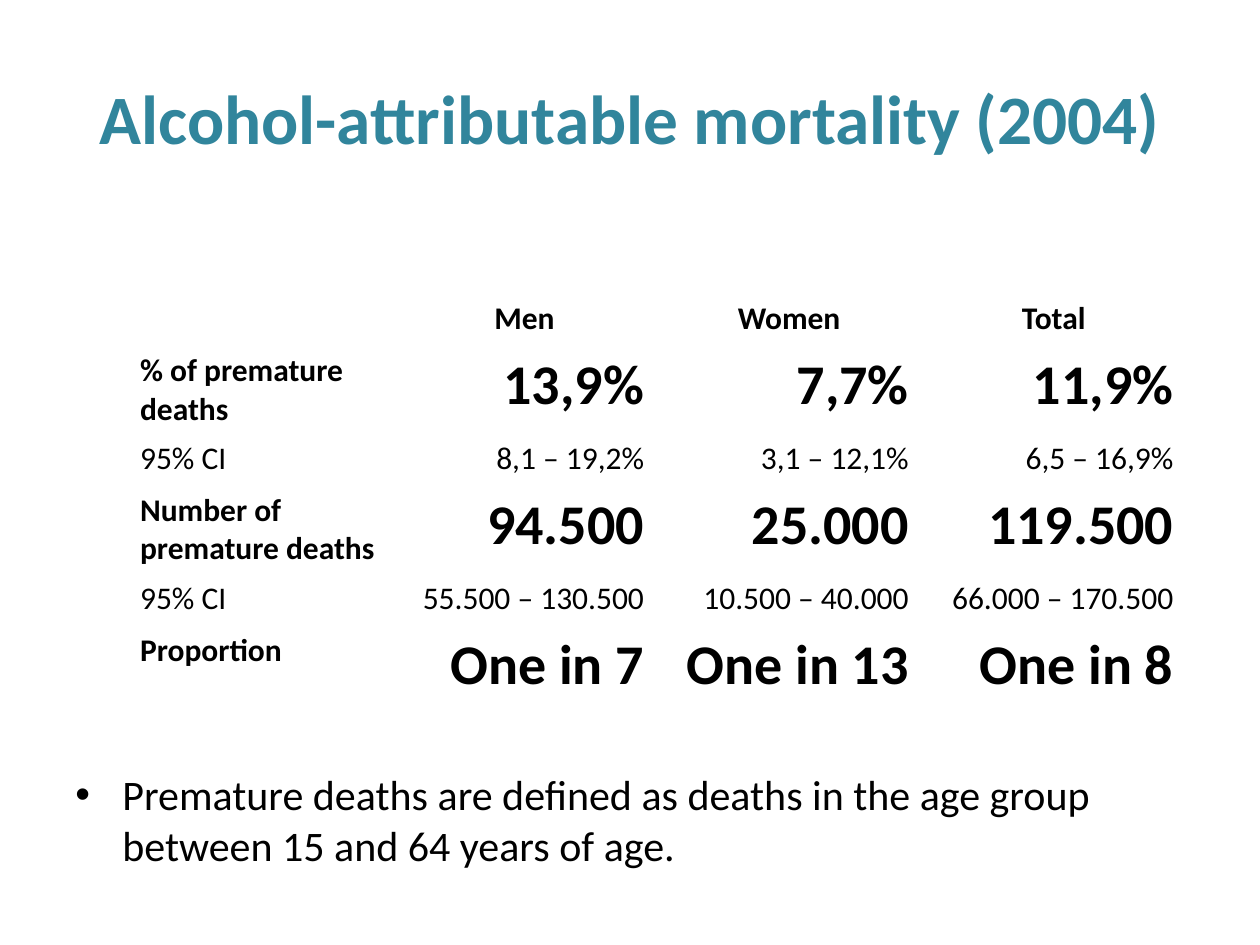
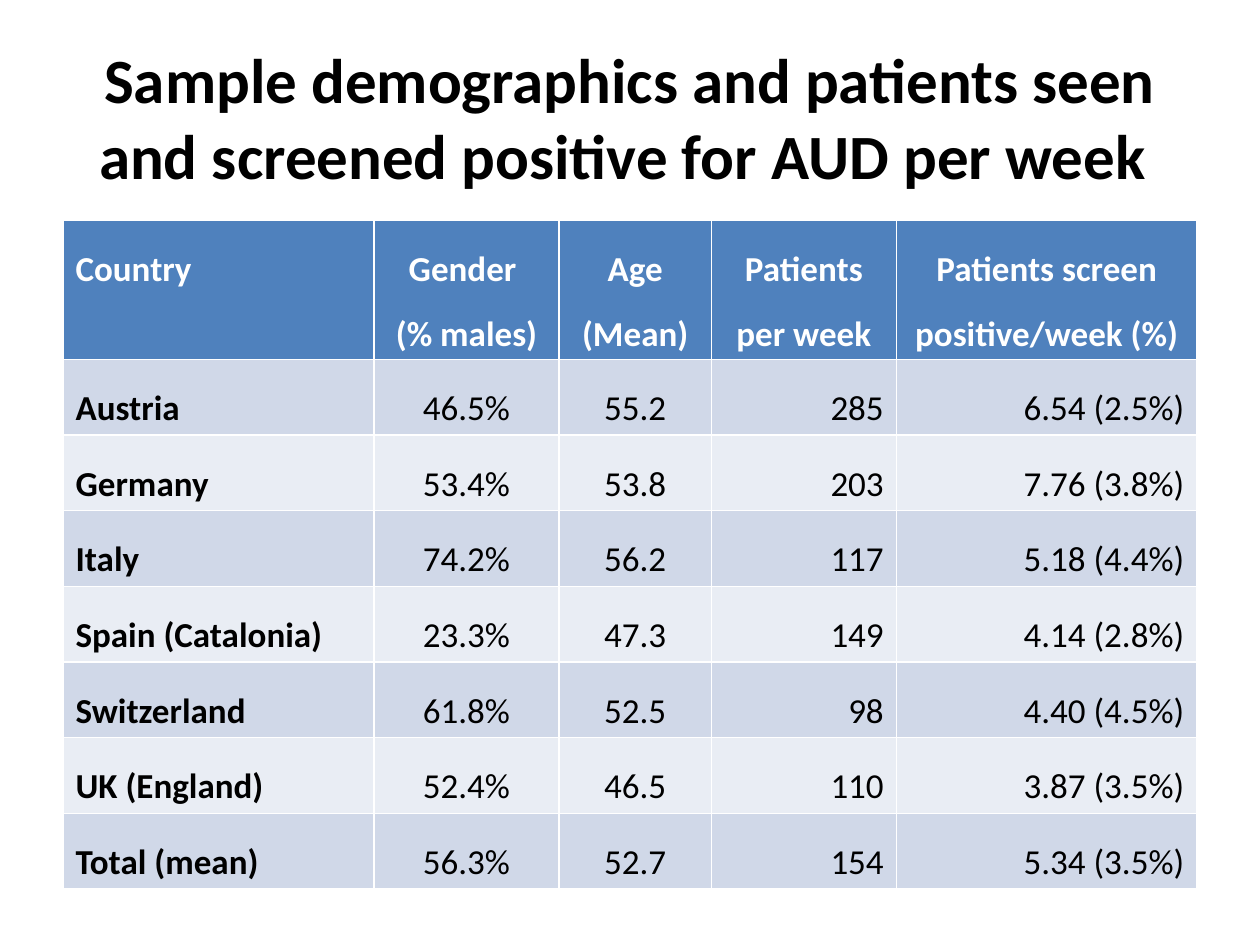
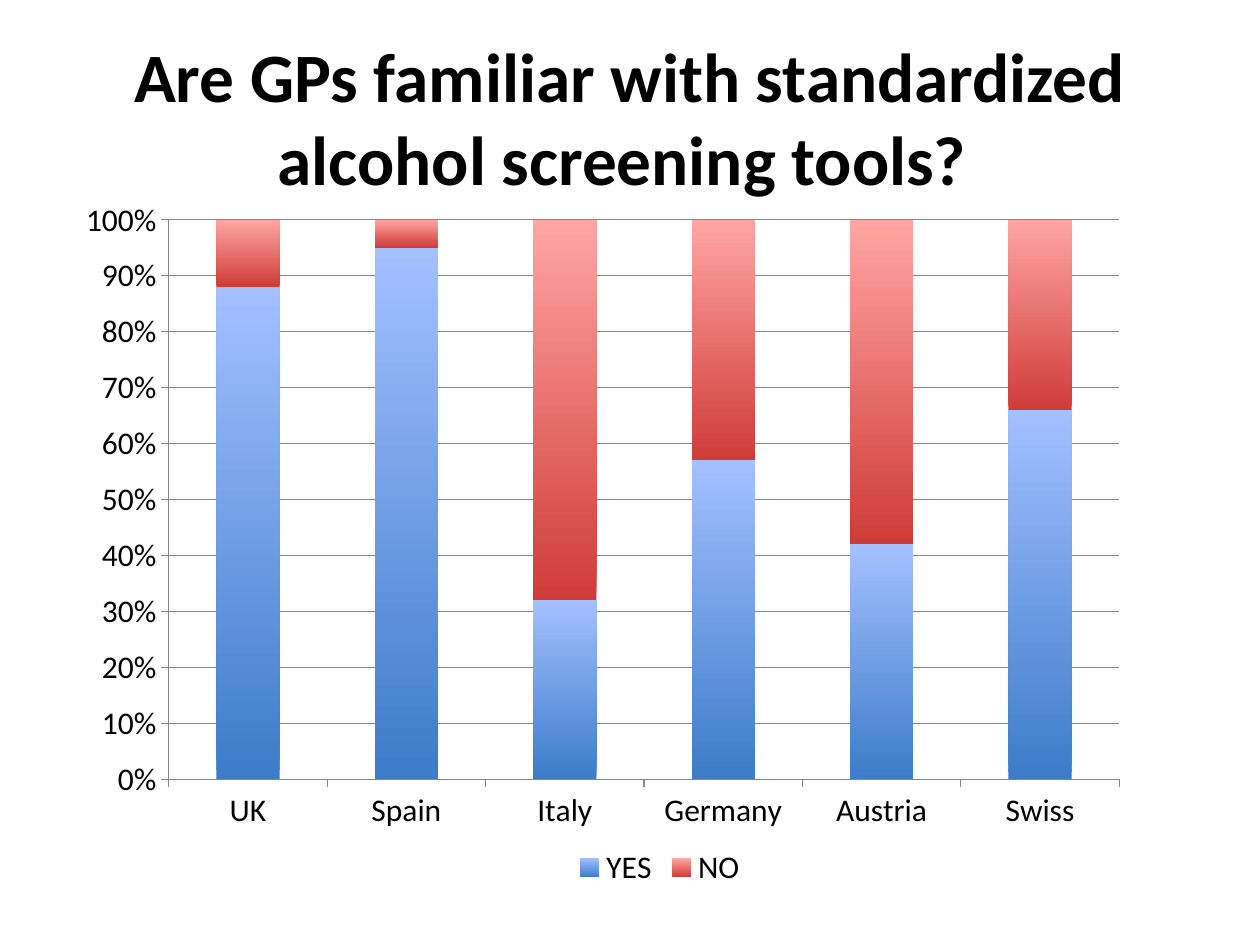
from dataclasses import dataclass

from lxml import etree
from pptx import Presentation
from pptx.chart.data import CategoryChartData
from pptx.dml.color import RGBColor
from pptx.enum.chart import XL_CHART_TYPE, XL_LEGEND_POSITION, XL_TICK_MARK
from pptx.enum.text import MSO_ANCHOR, PP_ALIGN
from pptx.oxml.ns import qn
from pptx.util import Cm, Pt

LEFT, CENTER, RIGHT = PP_ALIGN.LEFT, PP_ALIGN.CENTER, PP_ALIGN.RIGHT
MIDDLE = MSO_ANCHOR.MIDDLE
STACKED = XL_CHART_TYPE.COLUMN_STACKED_100
BOTTOM = XL_LEGEND_POSITION.BOTTOM
OUT = XL_TICK_MARK.OUTSIDE

FONT = "Calibri"
COLORS = {
    "black": "000000",
    "white": "FFFFFF",
    "teal": "31859C",
    "head": "4F81BD",
    "odd": "D0D8E8",
    "even": "E9EDF4",
    "line": "878787",
}
SHADES = {"YES": ("3C7CC9", "A3C0FF"), "NO": ("CF3C38", "FFA5A3")}


@dataclass
class Box:
    """Left, top, width and height in centimetres."""
    left: float
    top: float
    width: float
    height: float

    def emu(self) -> tuple:
        return Cm(self.left), Cm(self.top), Cm(self.width), Cm(self.height)


@dataclass
class Style:
    size: float
    bold: bool = False
    color: str = "black"
    align: PP_ALIGN = LEFT
    space: float = 1


TITLE = Box(1.27, 0.76, 22.86, 3.18)
NOTE = Box(1.27, 15.37, 22.86, 2.59)
DEATHS = Box(2.57, 5.92, 21.34, 6.24)
SAMPLE = Box(1.27, 4.45, 22.86, 8.32)
TOOLS = Box(1.7, 4.01, 21.29, 14.1)

DEATH_ROWS = [
    ("", "Men", "Women", "Total"),
    ("% of premature deaths", "13,9%", "7,7%", "11,9%"),
    ("95% CI", "8,1 – 19,2%", "3,1 – 12,1%", "6,5 – 16,9%"),
    ("Number of premature deaths", "94.500", "25.000", "119.500"),
    ("95% CI", "55.500 – 130.500", "10.500 – 40.000", "66.000 – 170.500"),
    ("Proportion", "One in 7", "One in 13", "One in 8"),
]
SAMPLE_ROWS = [
    ("Country", "Gender \n(% males)", "Age (Mean)", "Patients per week",
     "Patients screen positive/week (%)"),
    ("Austria", "46.5%", "55.2", "285", "6.54 (2.5%)"),
    ("Germany", "53.4%", "53.8", "203", "7.76 (3.8%)"),
    ("Italy", "74.2%", "56.2", "117", "5.18 (4.4%)"),
    ("Spain (Catalonia)", "23.3%", "47.3", "149", "4.14 (2.8%)"),
    ("Switzerland", "61.8%", "52.5", "98", "4.40 (4.5%)"),
    ("UK (England)", "52.4%", "46.5", "110", "3.87 (3.5%)"),
    ("Total (mean)", "56.3%", "52.7", "154", "5.34 (3.5%)"),
]
SAMPLE_COLS = (6.27, 3.73, 3.07, 3.73, 6.06)
LANDS = ("UK", "Spain", "Italy", "Germany", "Austria", "Swiss")
ANSWERS = {"YES": (88, 95, 32, 57, 42, 66), "NO": (12, 5, 68, 43, 58, 34)}


def rgb(name: str) -> RGBColor:
    return RGBColor.from_string(COLORS[name])


def write(frame, text: str, style: Style) -> None:
    frame.text = text
    for para in frame.paragraphs:
        para.alignment = style.align
        para.line_spacing = style.space
        for run in para.runs:
            font = run.font
            font.name, font.size, font.bold = FONT, Pt(style.size), style.bold
            font.color.rgb = rgb(style.color)


def add_text(slide, box: Box, text: str, style: Style):
    frame = slide.shapes.add_textbox(*box.emu()).text_frame
    frame.word_wrap = True
    write(frame, text, style)
    return frame


def add_title(slide, text: str, size: float = 39.6, color: str = "black") -> None:
    frame = add_text(slide, TITLE, text, Style(size, True, color, CENTER))
    frame.vertical_anchor = MIDDLE


def add_bullet(para) -> None:
    para.space_before = Pt(4.8)
    props = para._p.get_or_add_pPr()
    props.set("marL", str(Cm(0.95)))
    props.set("indent", str(-Cm(0.95)))
    etree.SubElement(props, qn("a:buFont"), typeface="Arial")
    etree.SubElement(props, qn("a:buChar"), char="•")


def add_edges(cell) -> None:
    """Thin white borders on all four sides; call before the fill is set."""
    props = cell._tc.get_or_add_tcPr()
    for side in "LRTB":
        line = etree.SubElement(props, qn(f"a:ln{side}"), w=str(Pt(1)))
        fill = etree.SubElement(line, qn("a:solidFill"))
        etree.SubElement(fill, qn("a:srgbClr"), val=COLORS["white"])


def add_grid(slide, box: Box, rows: list, cols: tuple):
    grid = slide.shapes.add_table(len(rows), len(cols), *box.emu()).table
    for col, width in zip(grid.columns, cols):
        col.width = Cm(width)
    return grid


def death_style(row: int, col: int) -> Style:
    if row == 0:
        return Style(18, True, align=CENTER)
    bold = row % 2 == 1
    if col == 0:
        return Style(18, bold)
    return Style(32 if bold else 18, bold, align=RIGHT)


def sample_style(row: int, col: int) -> Style:
    aligns = (LEFT, CENTER, CENTER, RIGHT, RIGHT)
    if row == 0:
        return Style(20, True, "white", CENTER if col else LEFT, 1.5)
    return Style(20, col == 0, "black", aligns[col], 1.5)


def draw_deaths(slide) -> None:
    add_title(slide, "Alcohol-attributable mortality (2004)", color="teal")
    frame = add_text(
        slide, NOTE,
        "Premature deaths are defined as deaths in the age group "
        "between 15 and 64 years of age.", Style(24))
    add_bullet(frame.paragraphs[0])
    count = len(DEATH_ROWS[0])
    grid = add_grid(slide, DEATHS, DEATH_ROWS, (DEATHS.width / count,) * count)
    for row, texts in enumerate(DEATH_ROWS):
        for col, text in enumerate(texts):
            cell = grid.cell(row, col)
            write(cell.text_frame, text, death_style(row, col))
            cell.fill.background()


def draw_sample(slide) -> None:
    add_title(slide, "Sample demographics and patients seen and screened "
              "positive for AUD per week ", 36)
    grid = add_grid(slide, SAMPLE, SAMPLE_ROWS, SAMPLE_COLS)
    for row, texts in enumerate(SAMPLE_ROWS):
        shade = "head" if row == 0 else "odd" if row % 2 else "even"
        for col, text in enumerate(texts):
            cell = grid.cell(row, col)
            write(cell.text_frame, text, sample_style(row, col))
            add_edges(cell)
            cell.fill.solid()
            cell.fill.fore_color.rgb = rgb(shade)


def set_layout(node, index: int, **parts) -> None:
    """Place a chart part by hand, as shares of the chart's size."""
    for old in node.findall(qn("c:layout")):
        node.remove(old)
    layout = etree.Element(qn("c:layout"))
    node.insert(index, layout)
    manual = etree.SubElement(layout, qn("c:manualLayout"))
    for tag, val in parts.items():
        etree.SubElement(manual, qn(f"c:{tag}"), val=str(val))


def set_axis(axis) -> None:
    axis.major_tick_mark = OUT
    axis.format.line.color.rgb = rgb("line")
    axis.format.line.width = Pt(0.75)


def draw_tools(slide) -> None:
    add_title(slide, "Are GPs familiar with standardized alcohol screening tools? ")
    data = CategoryChartData()
    data.categories = LANDS
    for name, vals in ANSWERS.items():
        data.add_series(name, vals)
    chart = slide.shapes.add_chart(STACKED, *TOOLS.emu(), data).chart
    chart.has_title = False
    chart.font.name, chart.font.size = FONT, Pt(18)
    chart.font.color.rgb = rgb("black")

    plot = chart.plots[0]
    plot.gap_width, plot.overlap = 150, 100
    plot.vary_by_categories = False
    for series in plot.series:
        fill = series.format.fill
        fill.gradient()
        fill.gradient_angle = 90
        for stop, shade in zip(fill.gradient_stops, SHADES[series.name]):
            stop.color.rgb = RGBColor.from_string(shade)

    axis = chart.value_axis
    set_axis(chart.category_axis)
    set_axis(axis)
    axis.has_major_gridlines = True
    grid = axis.major_gridlines.format.line
    grid.color.rgb, grid.width = rgb("line"), Pt(0.75)
    labels = axis.tick_labels
    labels.number_format, labels.number_format_is_linked = "0%", False

    chart.has_legend = True
    legend = chart.legend
    legend.position = BOTTOM
    legend.include_in_layout = False
    set_layout(legend._element, 1, xMode="edge", yMode="edge", x=0.46, y=0.92)
    area = chart._chartSpace.find(".//" + qn("c:plotArea"))
    set_layout(area, 0, layoutTarget="inner", xMode="edge", yMode="edge",
               x=0.08, y=0.03, w=0.9, h=0.8)


def main() -> None:
    deck = Presentation()
    deck.slide_width, deck.slide_height = Cm(25.4), Cm(19.05)
    for draw in (draw_deaths, draw_sample, draw_tools):
        draw(deck.slides.add_slide(deck.slide_layouts[6]))
    deck.save("out.pptx")


if __name__ == "__main__":
    main()
